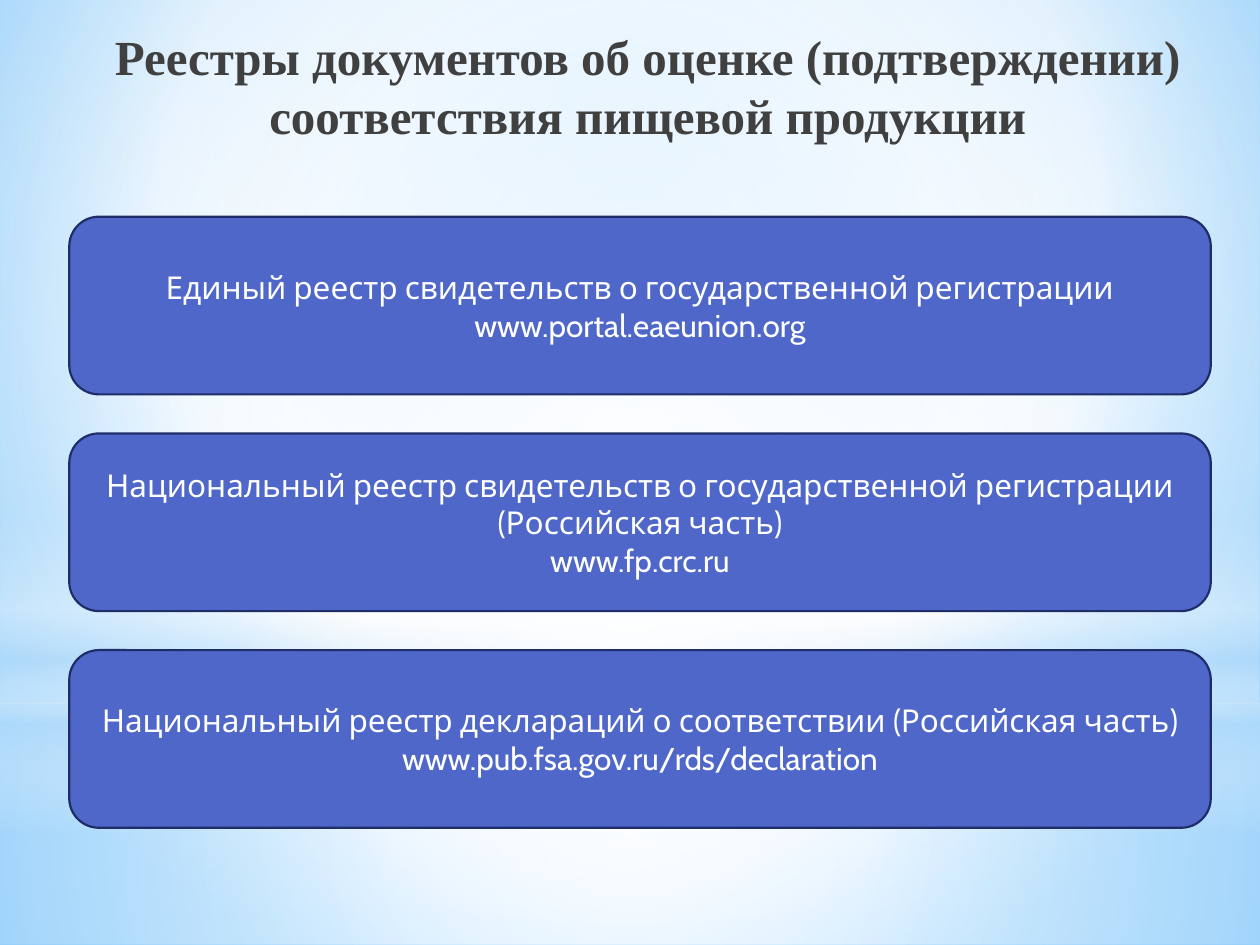
from dataclasses import dataclass

import pptx
import pptx.dml.color
import pptx.enum.shapes
import pptx.enum.text
import pptx.oxml
import pptx.oxml.ns
import pptx.util
from lxml import etree

Inches = pptx.util.Inches
Shape = pptx.enum.shapes.MSO_SHAPE
qn = pptx.oxml.ns.qn


@dataclass(frozen=True)
class Theme:
    title_color: str = "404040"
    title_font: str = "Times New Roman"
    title_size: int = 28
    card_fill: str = "4E67C8"
    card_line: str = "1F2E69"
    card_line_width: float = 1.25
    card_text: str = "FFFFFF"
    card_font: str = "Cabin"
    card_size: int = 18
    white: str = "FFFFFF"
    mist: str = "B4DCFA"
    sky: str = "9ED5FF"
    deep_sky: str = "5BB9FF"


def rgb(value):
    return pptx.dml.color.RGBColor.from_string(value)


def set_gradient(parent, stops, focus=None, angle=90):
    """Swap the parent's solid fill for a gradient of (position, colour, opacity) stops.

    With a focus (left, top, right, bottom percentages) it is circular, else linear.
    """
    gradient = pptx.oxml.parse_xml(
        f'<a:gradFill {pptx.oxml.ns.nsdecls("a")} rotWithShape="1"><a:gsLst/></a:gradFill>'
    )
    for position, color, opacity in stops:
        stop = etree.SubElement(gradient[0], qn("a:gs"), pos=str(position * 1000))
        tint = etree.SubElement(stop, qn("a:srgbClr"), val=color)
        if opacity < 100:
            etree.SubElement(tint, qn("a:alpha"), val=str(opacity * 1000))
    if focus:
        circle = etree.SubElement(gradient, qn("a:path"), {"path": "circle"})
        sides = {side: str(share * 1000) for side, share in zip("ltrb", focus)}
        etree.SubElement(circle, qn("a:fillToRect"), sides)
    else:
        etree.SubElement(gradient, qn("a:lin"), ang=str(angle * 60000), scaled="0")
    parent.replace(parent.find(qn("a:solidFill")), gradient)


def write_paragraph(para, text, *, font, size, color, bold=False):
    para.alignment = pptx.enum.text.PP_ALIGN.CENTER
    span = para.add_run()
    span.text = text
    span.font.name = font
    span.font.size = pptx.util.Pt(size)
    span.font.bold = bold
    span.font.color.rgb = rgb(color)


class SlideBuilder:
    def __init__(self, page, theme):
        self.page = page
        self.theme = theme

    def background(self, stops, focus):
        self.page.background.fill.solid()
        set_gradient(self.page.element.find(".//" + qn("p:bgPr")), stops, focus)

    def shape(self, kind, left, top, width, height):
        shape = self.page.shapes.add_shape(
            kind, Inches(left), Inches(top), Inches(width), Inches(height)
        )
        shape.shadow.inherit = False
        shape.fill.solid()
        return shape

    def glow(self, kind, top, height, stops, focus=None):
        """Add a full-width translucent layer of the backdrop."""
        layer = self.shape(kind, 0, top, 10, height)
        layer.line.fill.background()
        set_gradient(layer.element.spPr, stops, focus)

    def title(self, text, left, top, width, height):
        box = self.page.shapes.add_textbox(
            Inches(left), Inches(top), Inches(width), Inches(height)
        )
        frame = box.text_frame
        frame.word_wrap = True
        frame.margin_left = Inches(0.3)
        frame.vertical_anchor = pptx.enum.text.MSO_ANCHOR.MIDDLE
        theme = self.theme
        write_paragraph(frame.paragraphs[0], text, font=theme.title_font,
                        size=theme.title_size, color=theme.title_color, bold=True)

    def card(self, lines, left, top, width, height):
        theme = self.theme
        box = self.shape(Shape.ROUNDED_RECTANGLE, left, top, width, height)
        box.fill.fore_color.rgb = rgb(theme.card_fill)
        box.line.color.rgb = rgb(theme.card_line)
        box.line.width = pptx.util.Pt(theme.card_line_width)
        frame = box.text_frame
        frame.word_wrap = True
        frame.vertical_anchor = pptx.enum.text.MSO_ANCHOR.MIDDLE
        for index, line in enumerate(lines):
            para = frame.add_paragraph() if index else frame.paragraphs[0]
            write_paragraph(para, line, font=theme.card_font,
                            size=theme.card_size, color=theme.card_text)


REGISTERS = [
    ("Единый реестр свидетельств о государственной регистрации",
     "www.portal.eaeunion.org"),
    ("Национальный реестр свидетельств о государственной регистрации (Российская часть)",
     "www.fp.crc.ru"),
    ("Национальный реестр деклараций о соответствии (Российская часть)",
     "www.pub.fsa.gov.ru/rds/declaration"),
]


def draw_backdrop(builder):
    theme = builder.theme
    white, mist = theme.white, theme.mist
    center = (50, 50, 50, 50)
    builder.background(
        [(0, theme.sky, 100), (60, white, 100), (100, theme.deep_sky, 100)],
        (20, 10, 20, 60),
    )
    builder.glow(Shape.RECTANGLE, 5.58, 1.92,
                 [(0, white, 91), (37, white, 76), (100, mist, 79)], center)
    builder.glow(Shape.RECTANGLE, 0, 5.58,
                 [(0, white, 89), (48, white, 62), (100, mist, 79)], center)
    builder.glow(Shape.RECTANGLE, 4.12, 2.5,
                 [(0, white, 0), (29, white, 30), (45, mist, 40),
                  (55, white, 26), (65, mist, 60), (100, white, 0)])
    builder.glow(Shape.OVAL, 1.75, 5.58, [(0, white, 100), (56, white, 0)], center)


def main():
    deck = pptx.Presentation()
    deck.slide_width, deck.slide_height = Inches(10), Inches(7.5)
    page = deck.slides.add_slide(deck.slide_layouts[6])
    builder = SlideBuilder(page, Theme())
    draw_backdrop(builder)
    builder.title(
        "Реестры документов об оценке (подтверждении) соответствия пищевой продукции",
        0.51, 0.13, 9.06, 1.1,
    )
    first_top, step = 1.72, 1.72
    for index, lines in enumerate(REGISTERS):
        builder.card(lines, 0.55, first_top + index * step, 9.06, 1.41)
    deck.save("out.pptx")


if __name__ == "__main__":
    main()
